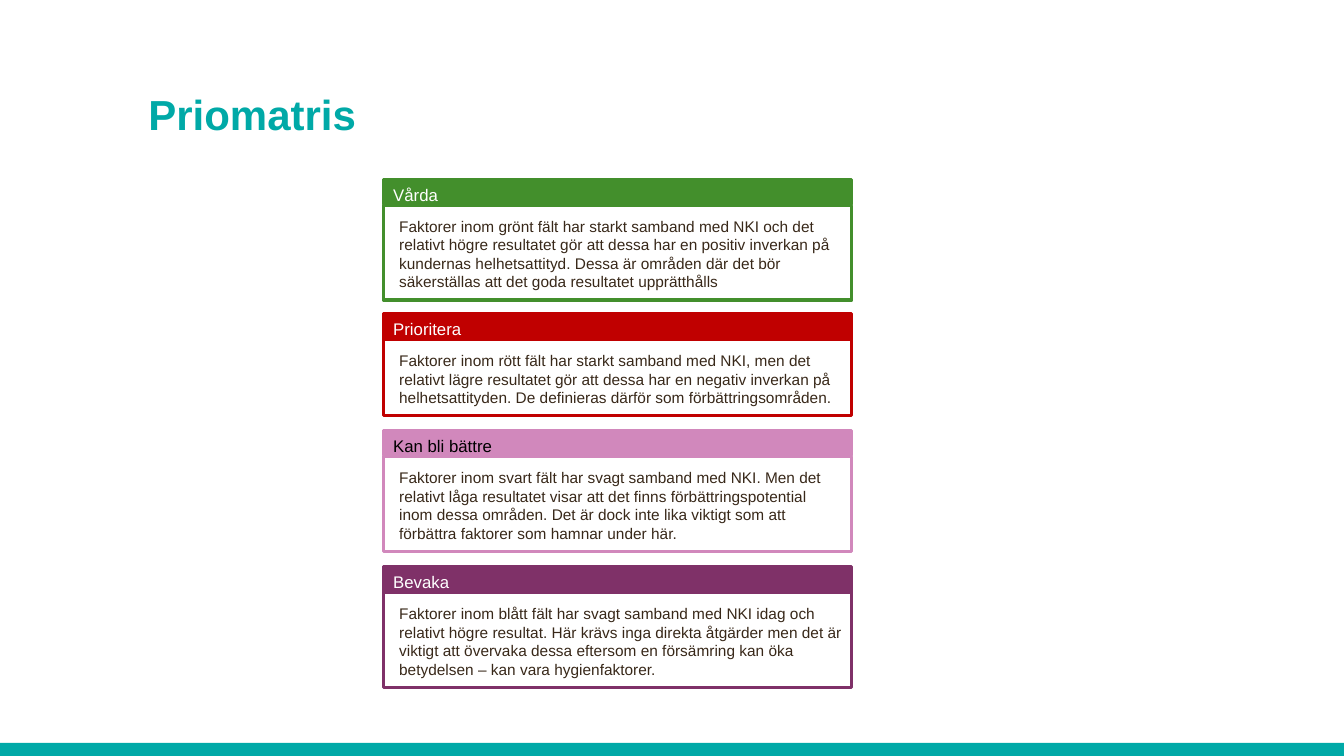
from dataclasses import dataclass

from pptx import Presentation
from pptx.dml.color import RGBColor
from pptx.enum.shapes import MSO_SHAPE as Preset
from pptx.enum.text import MSO_ANCHOR as Anchor, MSO_AUTO_SIZE as AutoSize, PP_ALIGN as Align
from pptx.util import Cm, Pt


@dataclass(frozen=True)
class Theme:
    """Colours, font and type sizes of the slide."""
    font: str = "Arial"
    teal: str = "00A9A7"
    green: str = "438F2C"
    red: str = "C00000"
    pink: str = "D188BC"
    purple: str = "7F3168"
    white: str = "FFFFFF"
    black: str = "000000"
    brown: str = "382819"
    title_size: int = 30
    heading_size: int = 12
    body_size: int = 11
    border: float = 2.25


THEME = Theme()
SLIDE_WIDTH, SLIDE_HEIGHT = 33.87, 19.05
BAR_HEIGHT = 0.33
CARD_LEFT, CARD_WIDTH = 9.66, 11.81
HEADING_HEIGHT, BODY_OFFSET = 0.64, 0.65

CARDS = [
    (4.52, 2.39, THEME.green, THEME.white, "Vårda",
     "Faktorer inom grönt fält har starkt samband med NKI och det relativt högre "
     "resultatet gör att dessa har en positiv inverkan på kundernas helhetsattityd. "
     "Dessa är områden där det bör säkerställas att det goda resultatet upprätthålls"),
    (7.91, 1.91, THEME.red, THEME.white, "Prioritera",
     "Faktorer inom rött fält har starkt samband med NKI, men det relativt lägre "
     "resultatet gör att dessa har en negativ inverkan på helhetsattityden. "
     "De definieras därför som förbättringsområden."),
    (10.85, 2.39, THEME.pink, THEME.black, "Kan bli bättre",
     "Faktorer inom svart fält har svagt samband med NKI. Men det relativt låga "
     "resultatet visar att det finns förbättringspotential inom dessa områden. "
     "Det är dock inte lika viktigt som att förbättra faktorer som hamnar under här."),
    (14.28, 2.39, THEME.purple, THEME.white, "Bevaka",
     "Faktorer inom blått fält har svagt samband med NKI idag och relativt högre "
     "resultat. Här krävs inga direkta åtgärder men det är viktigt att övervaka dessa "
     "eftersom en försämring kan öka betydelsen – kan vara hygienfaktorer."),
]


def write_text(box, text, *, size, color, bold=False, anchor=Anchor.TOP,
               insets=(0, 0, 0, 0), fit=AutoSize.NONE):
    """Put one left-aligned, formatted paragraph in a box."""
    frame = box.text_frame
    frame.word_wrap = True
    frame.auto_size = fit
    frame.vertical_anchor = anchor
    (frame.margin_left, frame.margin_top,
     frame.margin_right, frame.margin_bottom) = map(Cm, insets)
    para = frame.paragraphs[0]
    para.alignment = Align.LEFT
    span = para.add_run()
    span.text = text
    span.font.name = THEME.font
    span.font.size = Pt(size)
    span.font.bold = bold
    span.font.color.rgb = RGBColor.from_string(color)


def add_box(page, left, top, width, height, fill=None, line=None):
    """Add a rectangle with an optional fill and border."""
    box = page.shapes.add_shape(Preset.RECTANGLE, Cm(left), Cm(top), Cm(width), Cm(height))
    box.shadow.inherit = False
    if fill:
        box.fill.solid()
        box.fill.fore_color.rgb = RGBColor.from_string(fill)
    else:
        box.fill.background()
    if line:
        box.line.color.rgb = RGBColor.from_string(line)
        box.line.width = Pt(THEME.border)
    else:
        box.line.fill.background()
    return box


def add_title(page, text):
    """Place and format the title placeholder."""
    title = page.shapes.title
    title.left, title.top, title.width, title.height = map(Cm, (3.74, 0.91, 26.39, 2.59))
    write_text(title, text, size=THEME.title_size, color=THEME.teal, bold=True,
               anchor=Anchor.BOTTOM)


def add_card(page, top, body_height, color, heading_color, heading, body):
    """Add a coloured heading with a bordered description below it."""
    head_box = add_box(page, CARD_LEFT, top, CARD_WIDTH, HEADING_HEIGHT, fill=color, line=color)
    write_text(head_box, heading, size=THEME.heading_size, color=heading_color,
               insets=(0.25, 0.13, 0.25, 0), fit=AutoSize.SHAPE_TO_FIT_TEXT)
    body_box = add_box(page, CARD_LEFT, top + BODY_OFFSET, CARD_WIDTH, body_height, line=color)
    write_text(body_box, body, size=THEME.body_size, color=THEME.brown,
               insets=(0.4, 0.3, 0.2, 0.2), fit=AutoSize.SHAPE_TO_FIT_TEXT)


def main():
    """Build the slide and save it."""
    deck = Presentation()
    deck.slide_width, deck.slide_height = Cm(SLIDE_WIDTH), Cm(SLIDE_HEIGHT)
    page = deck.slides.add_slide(deck.slide_layouts.get_by_name("Title Only"))
    add_box(page, 0, SLIDE_HEIGHT - BAR_HEIGHT, SLIDE_WIDTH, BAR_HEIGHT, fill=THEME.teal)
    add_title(page, "Priomatris")
    for card in CARDS:
        add_card(page, *card)
    deck.save("out.pptx")


if __name__ == "__main__":
    main()
